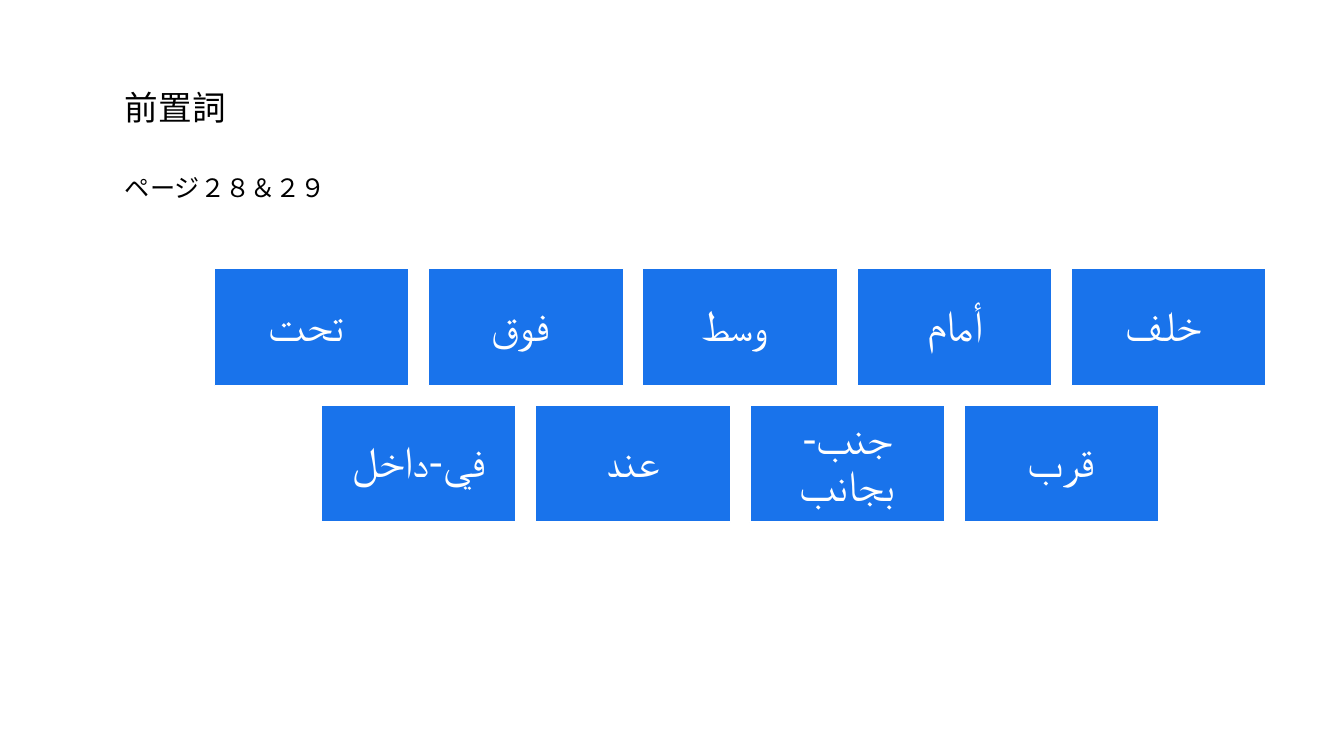
from pptx import Presentation
from pptx.dml.color import RGBColor
from pptx.enum.shapes import MSO_SHAPE as Shape
from pptx.enum.text import MSO_ANCHOR as Anchor, MSO_AUTO_SIZE as AutoSize, PP_ALIGN as Align
from pptx.util import Cm, Pt

FONT = "Calibri"
BLACK, WHITE, BLUE = "000000", "FFFFFF", "1973EB"
CARD_WIDTH, CARD_HEIGHT, GAP = 4.91, 2.95, 0.49
PREPOSITIONS = [
    ["تحت ", "فوق ", "وسط ", "أمام", "خلف "],
    ["في-داخل", "عند", "جنب-بجانب", "قرب"],
]


def color(hex_code):
    """Turn a hex string into a colour."""
    return RGBColor.from_string(hex_code)


def style_text(frame, text, size, hex_code):
    """Fill a text frame with one line of text and format its runs."""
    frame.word_wrap = True
    frame.text = text
    for run in frame.paragraphs[0].runs:
        run.font.name = FONT
        run.font.size = Pt(size)
        run.font.color.rgb = color(hex_code)


def add_heading(slide, text, size, left, top, width, height):
    """Place a heading line in the given box."""
    heading = slide.shapes.add_textbox(Cm(left), Cm(top), Cm(width), Cm(height))
    style_text(heading.text_frame, text, size, BLACK)
    heading.text_frame.auto_size = AutoSize.SHAPE_TO_FIT_TEXT


def add_card(slide, preposition, left, top):
    """Place one preposition card."""
    card = slide.shapes.add_shape(
        Shape.RECTANGLE, Cm(left), Cm(top), Cm(CARD_WIDTH), Cm(CARD_HEIGHT))
    card.shadow.inherit = False
    card.fill.solid()
    card.fill.fore_color.rgb = color(BLUE)
    card.line.color.rgb = color(WHITE)
    card.line.width = Pt(1)
    frame = card.text_frame
    frame.margin_left = frame.margin_right = Cm(0.33)
    frame.margin_top = frame.margin_bottom = Cm(0.33)
    frame.vertical_anchor = Anchor.MIDDLE
    style_text(frame, preposition, 31, WHITE)
    frame.paragraphs[0].alignment = Align.CENTER
    frame.paragraphs[0].line_spacing = 0.9


def add_card_rows(slide, rows, left, top, width):
    """Stack rows of cards, each centred across the given width."""
    for row_index, row in enumerate(rows):
        row_width = len(row) * (CARD_WIDTH + GAP) - GAP
        row_left = left + (width - row_width) / 2
        row_top = top + row_index * (CARD_HEIGHT + GAP)
        for column, preposition in enumerate(row):
            add_card(slide, preposition, row_left + column * (CARD_WIDTH + GAP), row_top)


def main():
    """Build the prepositions slide and save it."""
    deck = Presentation()
    deck.slide_width, deck.slide_height = Cm(33.87), Cm(19.05)
    slide = deck.slides.add_slide(deck.slide_layouts[6])
    add_heading(slide, "前置詞", 24, 2.9, 2.06, 25, 1.27)
    add_heading(slide, "ページ２８＆２９", 18, 2.9, 4.22, 22.56, 1.03)
    add_card_rows(slide, PREPOSITIONS, 5.4, 6.77, 26.51)
    deck.save("out.pptx")


if __name__ == "__main__":
    main()
